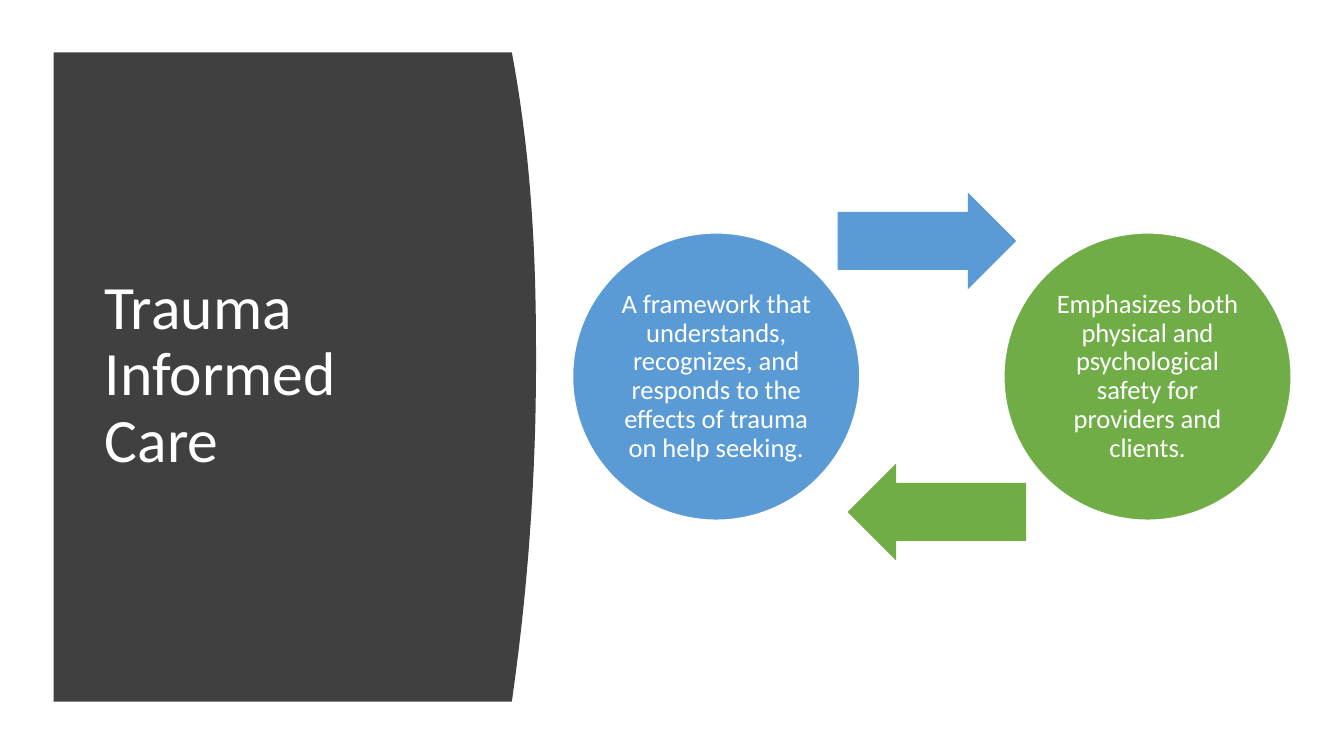
from pptx import Presentation
from pptx.dml.color import RGBColor
from pptx.enum import shapes as sh, text as tx
from pptx.util import Cm, Pt

WHITE = RGBColor(0xFF, 0xFF, 0xFF)
DARK = RGBColor(0x40, 0x40, 0x40)
BLUE = RGBColor(0x5B, 0x9B, 0xD5)
GREEN = RGBColor(0x70, 0xAD, 0x47)


def paint(shape, color):
    shape.shadow.inherit = False
    shape.fill.solid()
    shape.fill.fore_color.rgb = color
    shape.line.fill.background()


def write(shape, words, size, align, inset, right):
    """Fill a shape with one white paragraph; insets are in centimetres."""
    frame = shape.text_frame
    frame.text = words
    frame.word_wrap = True
    frame.auto_size = tx.MSO_AUTO_SIZE.NONE
    frame.vertical_anchor = tx.MSO_ANCHOR.MIDDLE
    frame.margin_left, frame.margin_right = Cm(inset), Cm(right)
    frame.margin_top = frame.margin_bottom = Cm(0.08)
    para = frame.paragraphs[0]
    para.alignment = align
    para.line_spacing = 0.9
    para.font.size = Pt(size)
    para.font.name = "Calibri"
    para.font.color.rgb = WHITE


deck = Presentation()
deck.slide_width, deck.slide_height = Cm(33.87), Cm(19.05)
slide = deck.slides.add_slide(deck.slide_layouts[5])

# Dark panel with a bulging right edge
left, top, base = 1.35, 1.32, 17.68
edge, bulge, peak = 12.9, 0.61, 9.14
steps = 48
curve = []
for i in range(steps + 1):
    y = top + (base - top) * i / steps
    if y < peak:
        drop = ((peak - y) / (peak - top)) ** 2.4
    else:
        drop = ((y - peak) / (base - peak)) ** 2
    curve.append((Cm(edge + bulge * (1 - drop)), Cm(y)))
pen = slide.shapes.build_freeform(Cm(left), Cm(top))
pen.add_line_segments(curve + [(Cm(left), Cm(base))], close=True)
panel = pen.convert_to_shape()
paint(panel, DARK)

title = slide.shapes.title
title.element.addprevious(panel.element)
title.left, title.top = Cm(2.39), Cm(2.82)
title.width, title.height = Cm(9.5), Cm(13.31)
write(title, "Trauma Informed Care", 44, tx.PP_ALIGN.LEFT, 0.25, 0.5)

# Two circles, each followed by the arrow leading to the other
size = 7.24
steps = [
    ("A framework that understands, recognizes, and responds to the "
     "effects of trauma on help seeking.", BLUE, 14.43, 21.11, 4.85, 0),
    ("Emphasizes both physical and psychological safety for providers "
     "and clients.", GREEN, 25.3, 21.36, 11.68, 180),
]
for words, color, x, tail, y, turn in steps:
    disc = slide.shapes.add_shape(
        sh.MSO_SHAPE.OVAL, Cm(x), Cm(5.87), Cm(size), Cm(size))
    paint(disc, color)
    disc.line.color.rgb = WHITE
    disc.line.width = Pt(1)
    write(disc, words, 19, tx.PP_ALIGN.CENTER, 0.08, 0.08)

    arrow = slide.shapes.add_shape(
        sh.MSO_SHAPE.RIGHT_ARROW, Cm(tail), Cm(y), Cm(4.5), Cm(2.44))
    arrow.adjustments[0] = 0.6
    arrow.rotation = turn
    paint(arrow, color)

deck.save("out.pptx")
